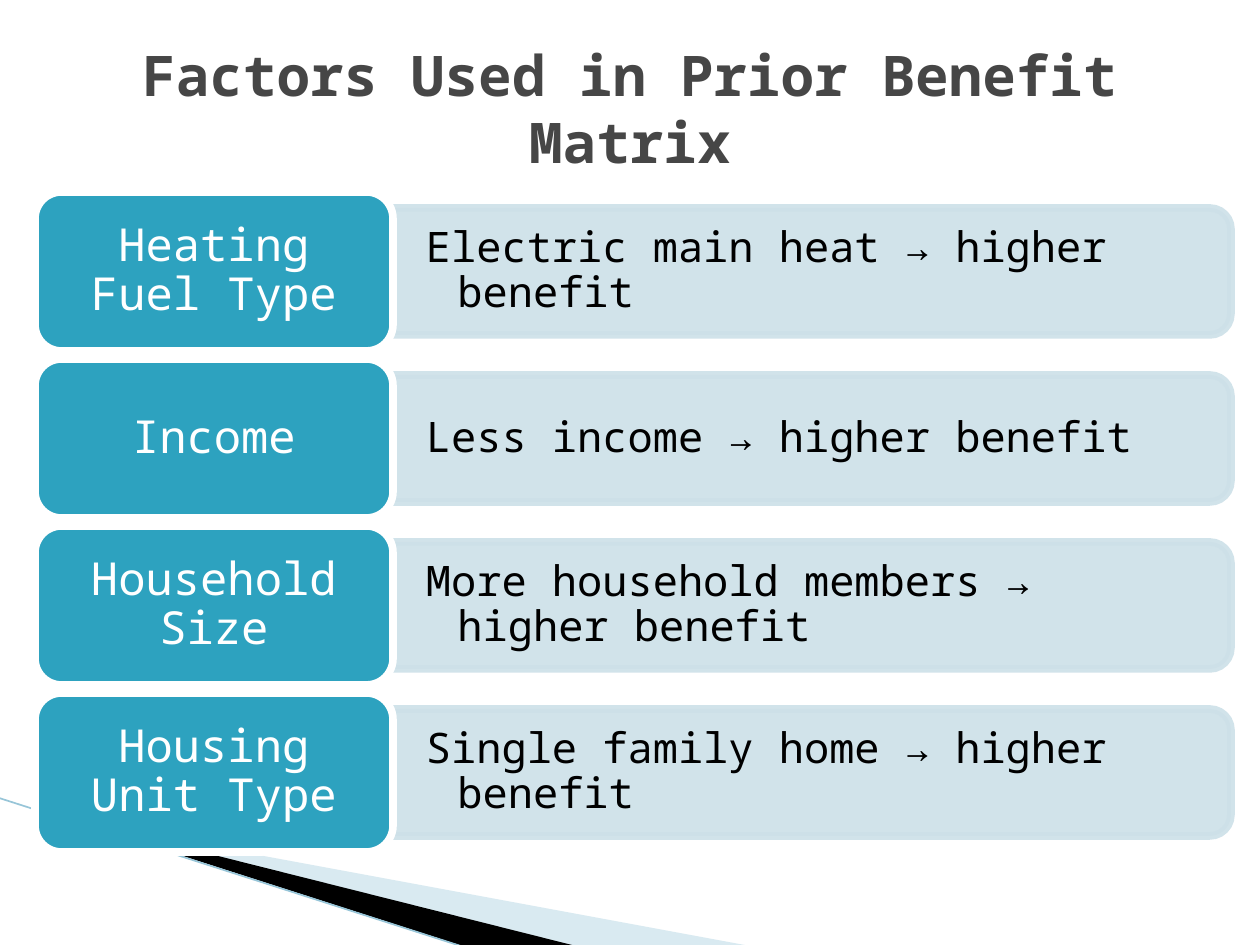
import pptx
import pptx.util
import pptx.dml.color
import pptx.enum.shapes
import pptx.enum.text
import pptx.oxml.ns
from lxml import etree

RGB = pptx.dml.color.RGBColor
SHAPE = pptx.enum.shapes.MSO_SHAPE
ALIGN = pptx.enum.text.PP_ALIGN
qn = pptx.oxml.ns.qn

# Content
TITLE = "Factors Used in Prior Benefit Matrix"
FACTORS = [
    ("Heating Fuel Type", "Electric main heat → higher benefit"),
    ("Income", "Less income → higher benefit"),
    ("Household Size", "More household members → higher benefit"),
    ("Housing Unit Type", "Single family home → higher benefit"),
]

FONT = "Noto Sans Mono"
TITLE_GREY = RGB(0x46, 0x46, 0x46)
BLACK = RGB(0x00, 0x00, 0x00)
WHITE = RGB(0xFF, 0xFF, 0xFF)
TEAL = RGB(0x2D, 0xA2, 0xBF)
PALE_BLUE = RGB(0xCD, 0xE0, 0xE8)
WEDGE_BLUE = RGB(0xA0, 0xCB, 0xDC)
EDGE_BLUE = RGB(0x97, 0xC5, 0xD8)

# Corner wedges: outline points in px, colour, opacity in percent
WEDGES = [
    ([(69, 820), (750, 946), (575, 946), (69, 819)], WEDGE_BLUE, 40),
    ([(67, 818), (576, 946), (469, 948), (68, 819)], BLACK, 100),
]

# Layout in px
SLIDE_W, SLIDE_H = 1260, 945
ROW_TOP, ROW_PITCH = 192, 167
TAB_LEFT, TAB_W, TAB_H = 35, 358, 159
BAR_LEFT, BAR_W, BAR_H = 392, 839, 127
EFFECT_W, EFFECT_H = 833, 115
BORDER = pptx.util.Pt(4.33)


def px(length):
    return round(length * 914400 / 126)


def set_opacity(fill_parent, percent):
    if percent < 100:
        color = fill_parent.find(qn("a:solidFill"))[0]
        etree.SubElement(color, qn("a:alpha")).set("val", str(percent * 1000))


def paint(shape, color, opacity=100, border=None):
    shape.shadow.inherit = False
    shape.fill.solid()
    shape.fill.fore_color.rgb = color
    properties = shape._element.spPr
    set_opacity(properties, opacity)
    if border is None:
        shape.line.fill.background()
    else:
        shape.line.color.rgb = border
        shape.line.width = BORDER
        set_opacity(properties.find(qn("a:ln")), opacity)


def write(shape, text, size, color, insets, align=ALIGN.CENTER, bold=False):
    frame = shape.text_frame
    frame.word_wrap = True
    frame.vertical_anchor = pptx.enum.text.MSO_ANCHOR.MIDDLE
    frame.margin_left = frame.margin_right = px(insets[0])
    frame.margin_top = frame.margin_bottom = px(insets[1])
    frame.text = text
    paragraph = frame.paragraphs[0]
    paragraph.alignment = align
    font = paragraph.runs[0].font
    font.name, font.size, font.bold = FONT, pptx.util.Pt(size), bold
    font.color.rgb = color
    return paragraph


prs = pptx.Presentation()
prs.slide_width, prs.slide_height = px(SLIDE_W), px(SLIDE_H)
slide = prs.slides.add_slide(prs.slide_layouts[6])
shapes = slide.shapes

# Corner decoration
for points, color, opacity in WEDGES:
    outline = [(px(x), px(y)) for x, y in points]
    builder = shapes.build_freeform(*outline[0])
    builder.add_line_segments(outline[1:], close=True)
    paint(builder.convert_to_shape(), color, opacity)

edge = shapes.add_connector(pptx.enum.shapes.MSO_CONNECTOR.STRAIGHT,
                            px(-1), px(798), px(467), px(948))
edge.line.color.rgb = EDGE_BLUE
edge.line.width = pptx.util.Pt(0.95)
etree.SubElement(edge._element.spPr, qn("a:effectLst"))

# Title
title = shapes.add_textbox(px(87), px(50), px(1086), px(116))
write(title, TITLE, 32, TITLE_GREY, (12, 6), bold=True)

# One row per factor: bar, effect text, tab
for row, (factor, effect) in enumerate(FACTORS):
    top = ROW_TOP + row * ROW_PITCH
    middle = top + TAB_H / 2

    # The bar stands upright and is turned so its round corners face right
    bar = shapes.add_shape(SHAPE.ROUND_2_SAME_RECTANGLE,
                           px(BAR_LEFT + (BAR_W - BAR_H) / 2), px(middle - BAR_W / 2),
                           px(BAR_H), px(BAR_W))
    bar.rotation = 90
    paint(bar, PALE_BLUE, 90, PALE_BLUE)

    effect_box = shapes.add_textbox(px(BAR_LEFT), px(middle - EFFECT_H / 2),
                                    px(EFFECT_W), px(EFFECT_H))
    paragraph = write(effect_box, effect, 24, BLACK, (34, 17), ALIGN.LEFT)
    paragraph.level = 1
    paragraph.line_spacing = 0.9
    indents = paragraph._p.get_or_add_pPr()
    indents.set("marL", str(px(31.5)))
    indents.set("indent", str(-px(31.5)))

    tab = shapes.add_shape(SHAPE.ROUNDED_RECTANGLE,
                           px(TAB_LEFT), px(top), px(TAB_W), px(TAB_H))
    paint(tab, TEAL, border=WHITE)
    write(tab, factor, 26, WHITE, (14, 6)).line_spacing = 0.9

prs.save("out.pptx")
